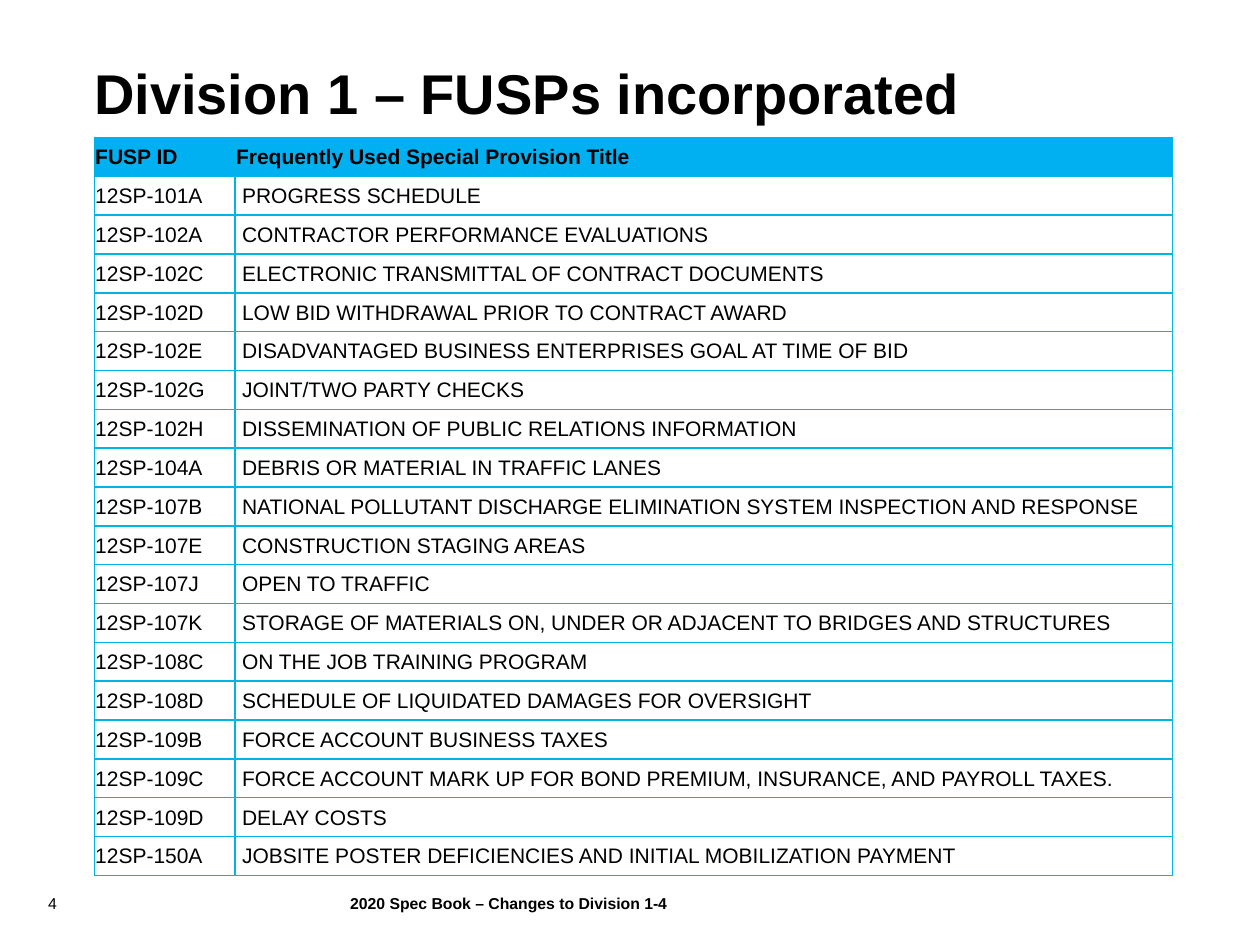
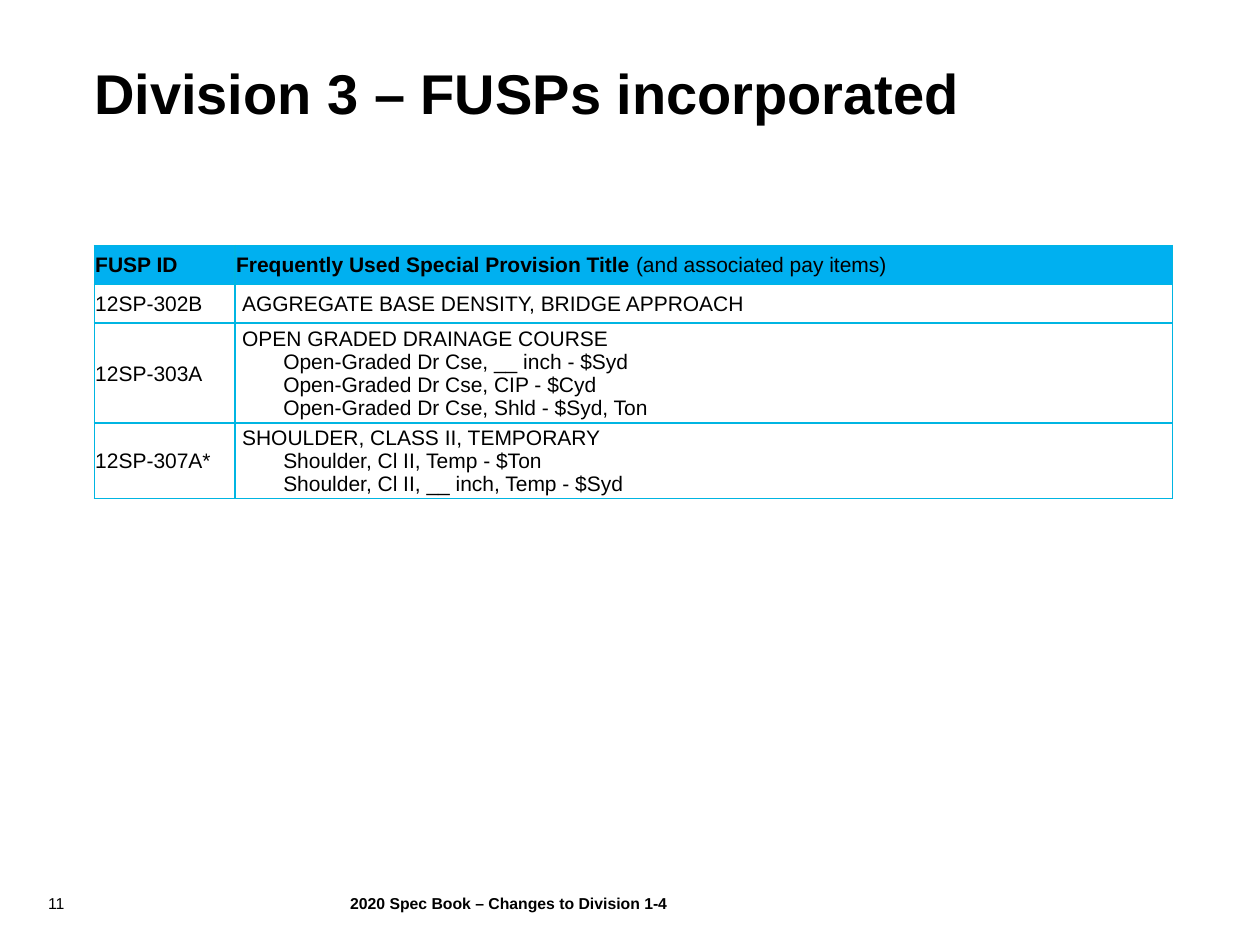
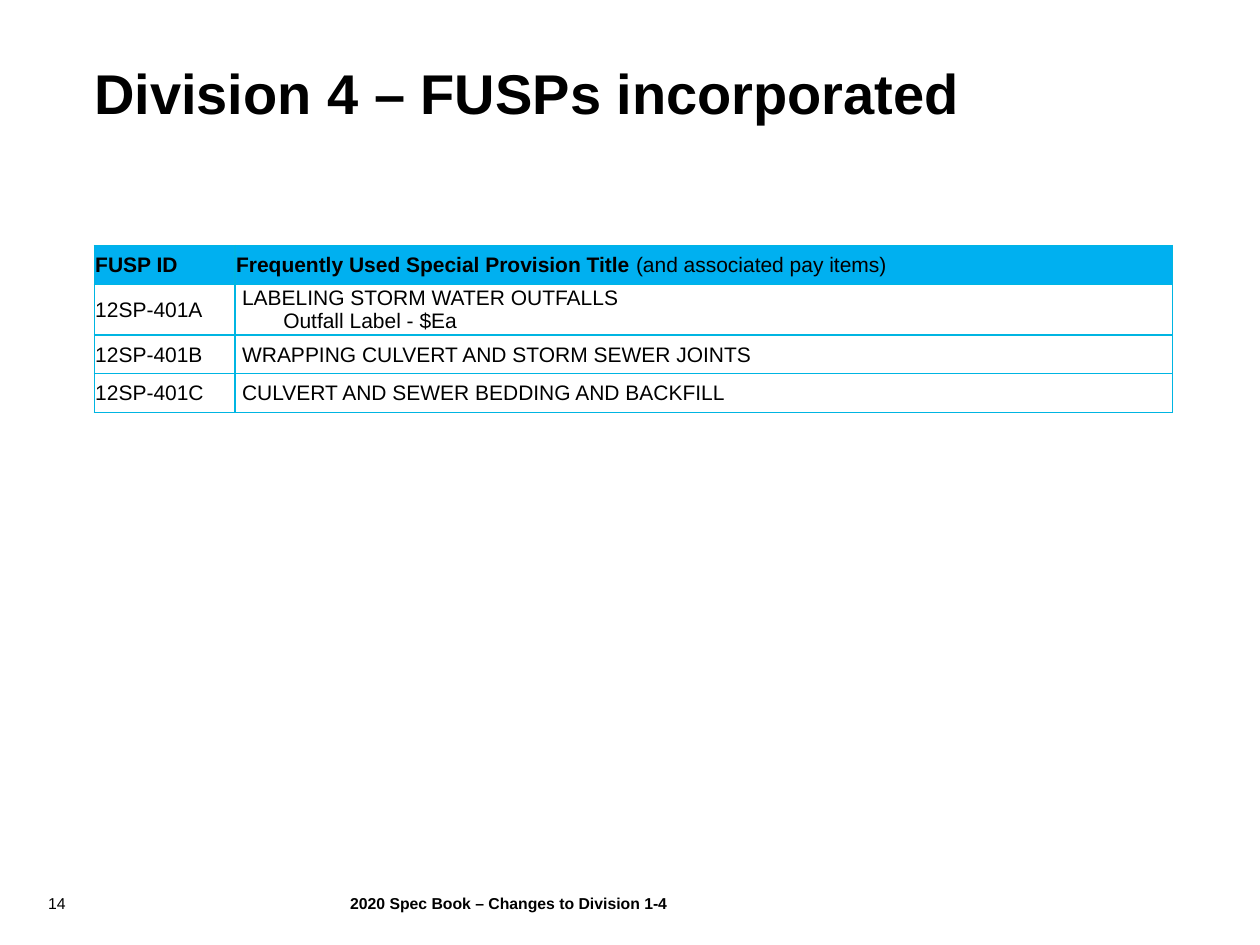
from lxml.etree import SubElement
from pptx import Presentation
from pptx.dml.color import RGBColor
from pptx.enum.text import MSO_ANCHOR
from pptx.oxml.ns import qn
from pptx.util import Cm, Pt

BLACK = RGBColor(0x00, 0x00, 0x00)
HEADER_BLUE = RGBColor(0x00, 0xB0, 0xF0)
BORDER_CYAN = RGBColor(0x00, 0xB5, 0xE2)
FONT = "Arial"

LEFT = Cm(1.9)
COLUMN_WIDTHS = [Cm(2.84), Cm(18.9)]
ROW_HEIGHT = Cm(14.88) // 19
LINE_HEIGHT = Cm(0.48)
TITLE_INDENT = Cm(0.12)
ITEM_INDENT = Cm(0.95)
FOOTER_TOP = Cm(18.01)
FOOTER_HEIGHT = Cm(0.51)
FOOTER = "2020 Spec Book – Changes to Division 1-4"

PAY_ITEMS = "(and associated pay items)"

# Each row holds an ID, a provision title and any pay items below it.
DIVISIONS = [
    {"title": "Division 1 – FUSPs incorporated", "number": "4", "top": Cm(2.77), "note": "", "rows": [
        ("12SP-101A", "PROGRESS SCHEDULE"),
        ("12SP-102A", "CONTRACTOR PERFORMANCE EVALUATIONS"),
        ("12SP-102C", "ELECTRONIC TRANSMITTAL OF CONTRACT DOCUMENTS"),
        ("12SP-102D", "LOW BID WITHDRAWAL PRIOR TO CONTRACT AWARD"),
        ("12SP-102E", "DISADVANTAGED BUSINESS ENTERPRISES GOAL AT TIME OF BID"),
        ("12SP-102G", "JOINT/TWO PARTY CHECKS"),
        ("12SP-102H", "DISSEMINATION OF PUBLIC RELATIONS INFORMATION"),
        ("12SP-104A", "DEBRIS OR MATERIAL IN TRAFFIC LANES"),
        ("12SP-107B", "NATIONAL POLLUTANT DISCHARGE ELIMINATION SYSTEM INSPECTION AND RESPONSE"),
        ("12SP-107E", "CONSTRUCTION STAGING AREAS"),
        ("12SP-107J", "OPEN TO TRAFFIC"),
        ("12SP-107K", "STORAGE OF MATERIALS ON, UNDER OR ADJACENT TO BRIDGES AND STRUCTURES"),
        ("12SP-108C", "ON THE JOB TRAINING PROGRAM"),
        ("12SP-108D", "SCHEDULE OF LIQUIDATED DAMAGES FOR OVERSIGHT"),
        ("12SP-109B", "FORCE ACCOUNT BUSINESS TAXES"),
        ("12SP-109C", "FORCE ACCOUNT MARK UP FOR BOND PREMIUM, INSURANCE, AND PAYROLL TAXES."),
        ("12SP-109D", "DELAY COSTS"),
        ("12SP-150A", "JOBSITE POSTER DEFICIENCIES AND INITIAL MOBILIZATION PAYMENT"),
    ]},
    {"title": "Division 3 – FUSPs incorporated", "number": "11", "top": Cm(4.95), "note": PAY_ITEMS, "rows": [
        ("12SP-302B", "AGGREGATE BASE DENSITY, BRIDGE APPROACH"),
        ("12SP-303A", "OPEN GRADED DRAINAGE COURSE",
         "Open-Graded Dr Cse, __ inch - $Syd",
         "Open-Graded Dr Cse, CIP - $Cyd",
         "Open-Graded Dr Cse, Shld - $Syd, Ton"),
        ("12SP-307A*", "SHOULDER, CLASS II, TEMPORARY",
         "Shoulder, Cl II, Temp - $Ton",
         "Shoulder, Cl II, __ inch, Temp - $Syd"),
    ]},
    {"title": "Division 4 – FUSPs incorporated", "number": "14", "top": Cm(4.95), "note": PAY_ITEMS, "rows": [
        ("12SP-401A", "LABELING STORM WATER OUTFALLS", "Outfall Label - $Ea"),
        ("12SP-401B", "WRAPPING CULVERT AND STORM SEWER JOINTS"),
        ("12SP-401C", "CULVERT AND SEWER BEDDING AND BACKFILL"),
    ]},
]


def write(para, text, size=12, bold=False, indent=0, level=0):
    """Append a formatted span to the paragraph."""
    if indent:
        para.level = level
        properties = para._p.get_or_add_pPr()
        properties.set("marL", str(indent))
        properties.set("indent", "0")
    span = para.add_run()
    span.text = text
    span.font.name = FONT
    span.font.size = Pt(size)
    span.font.bold = bold
    span.font.color.rgb = BLACK


def style_cell(cell, is_header):
    cell.vertical_anchor = MSO_ANCHOR.MIDDLE
    cell.margin_left = cell.margin_right = cell.margin_top = Cm(0.02)
    cell.margin_bottom = 0
    if is_header:
        cell.fill.solid()
        cell.fill.fore_color.rgb = HEADER_BLUE
    else:
        cell.fill.background()
    properties = cell._tc.get_or_add_tcPr()
    for position, side in enumerate(("lnL", "lnR", "lnT", "lnB")):
        line = SubElement(properties, qn(f"a:{side}"), w=str(Pt(1)))
        fill = SubElement(line, qn("a:solidFill"))
        SubElement(fill, qn("a:srgbClr"), val=str(BORDER_CYAN))
        properties.insert(position, line)


deck = Presentation()
deck.slide_width = Cm(25.4)
deck.slide_height = Cm(19.05)

for division in DIVISIONS:
    page = deck.slides.add_slide(deck.slide_layouts[6])

    labels = [
        (division["title"], LEFT, Cm(1.19), Cm(21.9), Cm(1.4), 32, True),
        (division["number"], Cm(0.97), FOOTER_TOP, Cm(0.94), FOOTER_HEIGHT, 9, False),
        (FOOTER, Cm(7.06), FOOTER_TOP, Cm(11.25), FOOTER_HEIGHT, 9, True),
    ]
    for text, left, top, width, height, size, bold in labels:
        frame = page.shapes.add_textbox(left, top, width, height).text_frame
        frame.word_wrap = True
        frame.margin_left = frame.margin_right = frame.margin_top = frame.margin_bottom = 0
        write(frame.paragraphs[0], text, size=size, bold=bold)

    rows = division["rows"]
    heights = [ROW_HEIGHT] + [max(ROW_HEIGHT, LINE_HEIGHT * (len(row) - 1)) for row in rows]
    table = page.shapes.add_table(
        len(heights), 2, LEFT, division["top"], sum(COLUMN_WIDTHS), sum(heights)).table
    table.first_row = True
    table.horz_banding = False
    for column, width in zip(table.columns, COLUMN_WIDTHS):
        column.width = width
    for index, height in enumerate(heights):
        table.rows[index].height = height
        for cell in table.rows[index].cells:
            style_cell(cell, index == 0)

    note = division["note"]
    heading = "Frequently Used Special Provision Title"
    write(table.cell(0, 0).text_frame.paragraphs[0], "FUSP ID", bold=True)
    heading_para = table.cell(0, 1).text_frame.paragraphs[0]
    write(heading_para, heading + " " if note else heading, bold=True)
    if note:
        write(heading_para, note)

    for index, (provision_id, provision, *items) in enumerate(rows, start=1):
        write(table.cell(index, 0).text_frame.paragraphs[0], provision_id)
        frame = table.cell(index, 1).text_frame
        write(frame.paragraphs[0], provision, indent=TITLE_INDENT)
        for item in items:
            write(frame.add_paragraph(), item, indent=ITEM_INDENT, level=1)
        if items:
            for para in frame.paragraphs:
                para.line_spacing = 0.98

deck.save("out.pptx")
